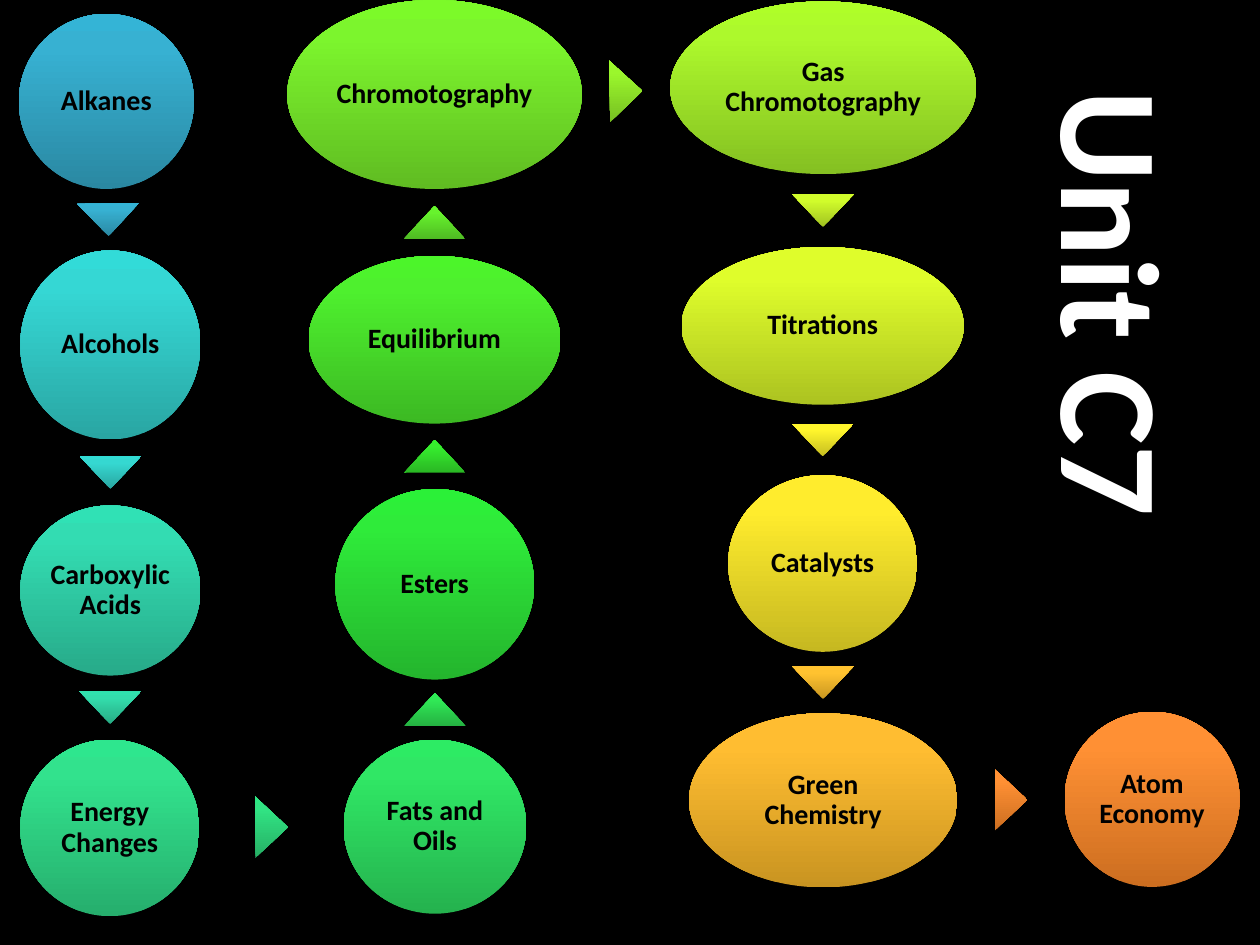
from copy import deepcopy
from itertools import pairwise
from math import atan2, degrees

from pptx import Presentation
from pptx.dml.color import RGBColor
from pptx.enum.shapes import MSO_SHAPE
from pptx.enum.text import MSO_ANCHOR, MSO_AUTO_SIZE, PP_ALIGN
from pptx.util import Cm, Pt

LABEL_FORMAT = {"name": "Calibri", "size": Pt(16), "bold": True}
TITLE_FORMAT = {"name": "Calibri", "size": Pt(80), "bold": True}
STOP_POSITIONS = (0, 0.8, 1)
ARROW_WIDTH, ARROW_HEIGHT = 1.24, 0.66

# Topic, box in cm (left, top, width, height), gradient from bottom to top
TOPICS = [
    ("Alkanes", (0.38, 0.28, 3.53, 3.53), "2A88A2 37B1D2 34B4D6"),
    ("Alcohols", (0.41, 5.05, 3.63, 3.81), "29A6A3 35D7D4 32DBD8"),
    ("Carboxylic Acids", (0.41, 10.19, 3.63, 3.43), "27AA89 33DCB2 30E1B5"),
    ("Energy Changes", (0.41, 14.91, 3.61, 3.56), "26AE6D 32E28D 2EE68E"),
    ("Fats and Oils", (6.93, 14.91, 3.68, 3.51), "25B24E 30E765 2DEB64"),
    ("Esters", (6.76, 9.86, 4.01, 3.84), "24B52D 2FEB3A 2BF038"),
    ("Equilibrium", (6.22, 5.16, 5.08, 3.38), "3CB923 4EF02E 4CF52A"),
    ("Chromotography", (5.79, 0, 5.94, 3.81), "60BC22 7CF52D 7CFA29"),
    ("Gas Chromotography", (13.51, 0.03, 6.17, 3.48), "85C022 ADF92C AFFE28"),
    ("Titrations", (13.74, 4.98, 5.69, 3.18), "ACC321 DFFD2B E1FF2B"),
    ("Catalysts", (14.68, 9.58, 3.81, 3.56), "C6B821 FFEC2D FFED2E"),
    ("Green Chemistry", (13.89, 14.38, 5.41, 3.51), "C99421 FFBD31 FFBE32"),
    ("Atom Economy", (21.46, 14.35, 3.53, 3.53), "CC6E20 FF9034 FF9136"),
]

# One gradient for the arrow after each topic
ARROW_COLOURS = [
    "2A88A2 37B1D2 34B4D6", "29A6A1 35D8D1 32DCD5", "27AB84 33DDAC 30E2AE",
    "26AF65 31E383 2EE783", "25B342 30E856 2CED54", "2AB724 36EE2E 33F22B",
    "4FBB23 67F32D 66F82A", "77BF22 9BF72C 9CFD28", "A1C221 D1FC2B D3FF2A",
    "C6BE21 FFF52C FFF52E", "C99721 FFC230 FFC232", "CC6E20 FF9034 FF9136",
]


def colour(value):
    return RGBColor.from_string(value)


def format_font(font, values, text_colour):
    for name, value in values.items():
        setattr(font, name, value)
    font.color.rgb = colour(text_colour)


def add_gradient_shape(slide, kind, box, colours):
    """Add a borderless shape whose gradient stays upright when it turns."""
    shape = slide.shapes.add_shape(kind, *map(Cm, box))
    shape.shadow.inherit = False
    shape.line.fill.background()
    shape.fill.gradient()
    shape.fill.gradient_angle = 90
    gradient = shape.element.spPr.gradFill
    gradient.set("rotWithShape", "0")
    gradient.gsLst.append(deepcopy(gradient.gsLst[-1]))
    stops = zip(shape.fill.gradient_stops, STOP_POSITIONS, colours.split())
    for stop, position, value in stops:
        stop.position = position
        stop.color.rgb = colour(value)
    return shape


def add_topic(slide, label, box, colours):
    shape = add_gradient_shape(slide, MSO_SHAPE.OVAL, box, colours)
    frame = shape.text_frame
    frame.word_wrap = True
    frame.vertical_anchor = MSO_ANCHOR.MIDDLE
    for side in ("left", "top", "right", "bottom"):
        setattr(frame, f"margin_{side}", Cm(0.05))
    paragraph = frame.paragraphs[0]
    paragraph.text = label
    paragraph.alignment = PP_ALIGN.CENTER
    paragraph.line_spacing = 0.9
    format_font(paragraph.runs[0].font, LABEL_FORMAT, "000000")


def gap_middle(start, length, next_start, next_length):
    """Middle between the facing edges of two spans, in either order."""
    if next_start >= start:
        return (start + length + next_start) / 2
    return (next_start + next_length + start) / 2


def add_arrow(slide, box, next_box, colours):
    """Put a triangle between two topics, pointing to the second."""
    left, top, width, height = box
    next_left, next_top, next_width, next_height = next_box
    centre_x, centre_y = left + width / 2, top + height / 2
    next_x, next_y = next_left + next_width / 2, next_top + next_height / 2
    run, rise = next_x - centre_x, centre_y - next_y
    middle_x, middle_y = (centre_x + next_x) / 2, (centre_y + next_y) / 2
    if abs(run) > abs(rise):
        middle_x = gap_middle(left, width, next_left, next_width)
    else:
        middle_y = gap_middle(top, height, next_top, next_height)
    arrow_box = (middle_x - ARROW_WIDTH / 2, middle_y - ARROW_HEIGHT / 2,
                 ARROW_WIDTH, ARROW_HEIGHT)
    shape = add_gradient_shape(slide, MSO_SHAPE.ISOSCELES_TRIANGLE, arrow_box, colours)
    shape.rotation = round(degrees(atan2(run, rise)), 1)


def add_flow(slide):
    for label, box, colours in TOPICS:
        add_topic(slide, label, box, colours)
    for (topic, next_topic), colours in zip(pairwise(TOPICS), ARROW_COLOURS):
        add_arrow(slide, topic[1], next_topic[1], colours)


def add_title(slide, text, box):
    shape = slide.shapes.add_textbox(*map(Cm, box))
    shape.rotation = 90
    frame = shape.text_frame
    frame.word_wrap = True
    frame.auto_size = MSO_AUTO_SIZE.SHAPE_TO_FIT_TEXT
    paragraph = frame.paragraphs[0]
    paragraph.text = text
    format_font(paragraph.runs[0].font, TITLE_FORMAT, "FFFFFF")


def main():
    presentation = Presentation()
    presentation.slide_width, presentation.slide_height = Cm(25.4), Cm(19.05)
    slide = presentation.slides.add_slide(presentation.slide_layouts[6])
    slide.background.fill.solid()
    slide.background.fill.fore_color.rgb = colour("000000")

    # Chain of topics, then the sideways title
    add_flow(slide)
    add_title(slide, "Unit C7", (17.53, 4.7, 9.93, 3.68))
    presentation.save("out.pptx")


if __name__ == "__main__":
    main()
